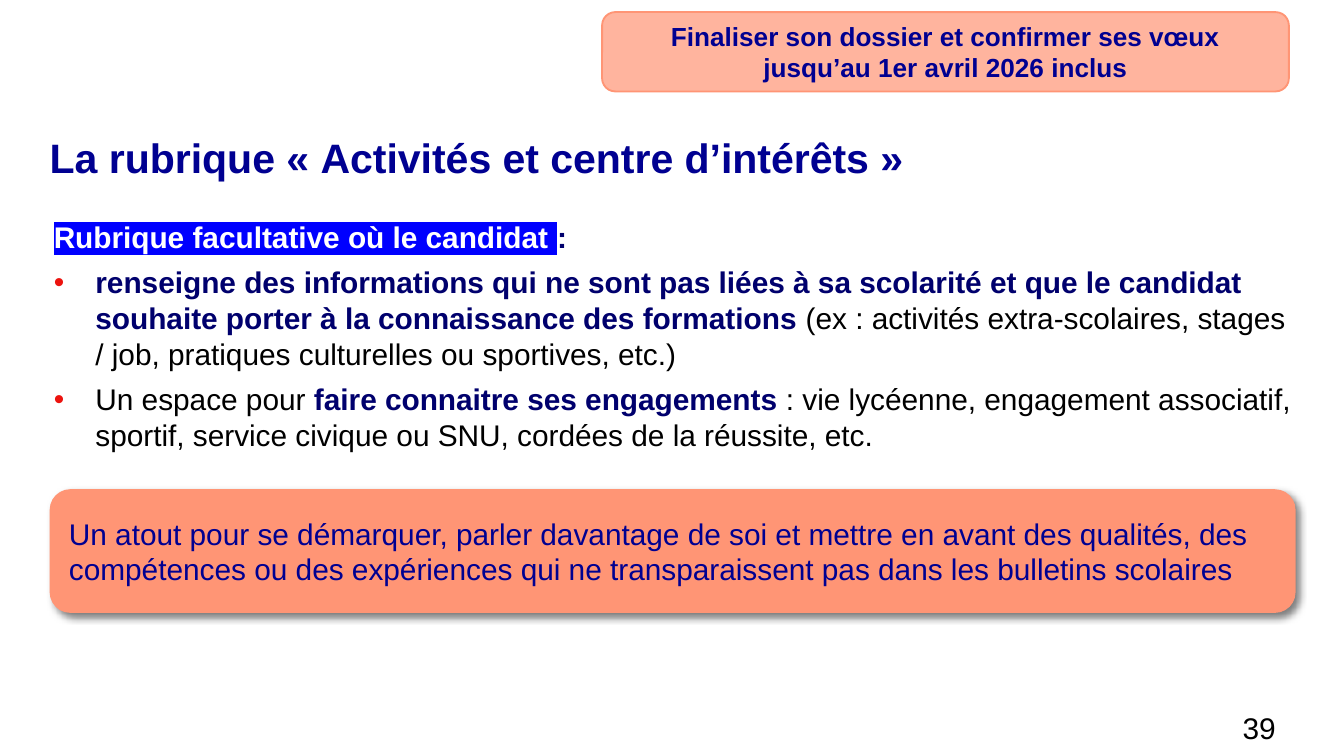
from lxml import etree
from pptx import Presentation
from pptx.dml.color import RGBColor
from pptx.enum.shapes import MSO_SHAPE
from pptx.enum.text import MSO_ANCHOR, PP_ALIGN
from pptx.oxml.ns import qn
from pptx.util import Inches, Pt

ROUND = MSO_SHAPE.ROUNDED_RECTANGLE
MIDDLE = MSO_ANCHOR.MIDDLE
LEFT, CENTER, RIGHT = PP_ALIGN.LEFT, PP_ALIGN.CENTER, PP_ALIGN.RIGHT
WIDTH = Inches(10)
HEIGHT = WIDTH * 9 // 16

COLORS = {
    "navy": "000091",
    "ink": "00006D",
    "blue": "0000FF",
    "coral": "FF9575",
    "red": "EC130E",
    "black": "000000",
    "white": "FFFFFF",
}
FLAT = {
    "margin_left": 0,
    "margin_right": 0,
    "margin_top": 0,
    "margin_bottom": 0,
}


def assign(target, values):
    for name, value in values.items():
        setattr(target, name, value)


def add_tag(parent, tag, **attrs):
    return etree.SubElement(parent, qn(tag), attrs)


def add_color(parent, name, alpha=None):
    color = add_tag(parent, "a:srgbClr", val=COLORS[name])
    if alpha:
        add_tag(color, "a:alpha", val=str(alpha * 1000))


def add_run(para, text, size, color, bold=False, mark=None):
    run = para.add_run()
    run.text = text
    assign(run.font, {"size": Pt(size), "bold": bold})
    run.font.color.rgb = RGBColor.from_string(COLORS[color])
    if mark:
        add_color(add_tag(run.font._element, "a:highlight"), mark)
    run.font.name = "Arial"


def add_bullet(para):
    props = para._p.get_or_add_pPr()
    indent = Inches(0.31)
    props.set("marL", str(indent))
    props.set("indent", str(-indent))
    add_color(add_tag(props, "a:buClr"), "red")
    add_tag(props, "a:buFont", typeface="Arial")
    add_tag(props, "a:buChar", char="•")


def add_text(slide, box, frame=None):
    text = slide.shapes.add_textbox(*map(Inches, box)).text_frame
    assign(text, {"word_wrap": True, **(frame or {})})
    return text


def add_card(slide, box, text, size, align, bold=False):
    card = slide.shapes.add_shape(ROUND, *map(Inches, box))
    card.shadow.inherit = False
    card.fill.solid()
    card.fill.fore_color.rgb = RGBColor.from_string(COLORS["coral"])
    card.line.fill.background()
    assign(card.text_frame, {"word_wrap": True, "vertical_anchor": MIDDLE})
    para = card.text_frame.paragraphs[0]
    para.alignment = align
    add_run(para, text, size, "navy", bold)
    return card


def add_banner(slide, box):
    text = "Finaliser son dossier et confirmer ses vœux jusqu’au 1er avril 2026 inclus"
    card = add_card(slide, box, text, 14, CENTER, True)
    fill = card._element.spPr.find(qn("a:solidFill"))
    add_tag(fill[0], "a:alpha", val="70000")
    card.line.color.rgb = RGBColor.from_string(COLORS["coral"])
    card.line.width = Pt(1)


def add_title(slide, box):
    para = add_text(slide, box, FLAT).paragraphs[0]
    para.line_spacing = 0.9
    add_run(para, "La rubrique «\u00a0Activités et centre d’intérêts\u00a0»", 22, "navy", True)


def add_body(slide, box):
    strong, plain = ("ink", True), ("black", False)
    rows = [
        (False, [
            ("Rubrique facultative où le candidat ", "white", True, "blue"),
            (":", *strong),
        ]),
        (True, [
            ("renseigne des informations qui ne sont pas liées à sa scolarité "
             "et que le candidat souhaite porter à la connaissance des formations ", *strong),
            ("(ex : activités extra-scolaires, stages / job, "
             "pratiques culturelles ou sportives, etc.)", *plain),
        ]),
        (True, [
            ("Un espace pour ", *plain),
            ("faire connaitre ses engagements ", *strong),
            (": vie lycéenne, engagement associatif, sportif, "
             "service civique ou SNU, cordées de la réussite, etc.", *plain),
        ]),
    ]
    frame = add_text(slide, box, FLAT)
    for index, (bullet, runs) in enumerate(rows):
        para = frame.add_paragraph() if index else frame.paragraphs[0]
        if bullet:
            add_bullet(para)
        para.space_after = Pt(5)
        for text, *style in runs:
            add_run(para, text, 16, *style)


def add_tip(slide, box):
    text = ("Un atout pour se démarquer, parler davantage de soi et mettre en avant "
            "des qualités, des compétences ou des expériences qui ne transparaissent "
            "pas dans les bulletins scolaires")
    card = add_card(slide, box, text, 16, LEFT)
    effects = card._element.spPr.find(qn("a:effectLst"))
    shade = add_tag(effects, "a:outerShdw", blurRad=str(Pt(4)), dist=str(Pt(3)),
                    dir=str(45 * 60000), algn="tl", rotWithShape="0")
    add_color(shade, "black", 50)


def add_number(slide, box):
    para = add_text(slide, box).paragraphs[0]
    para.alignment = RIGHT
    add_run(para, "39", 16, "black")


def main():
    deck = Presentation()
    assign(deck, {"slide_width": WIDTH, "slide_height": HEIGHT})
    slide = deck.slides.add_slide(deck.slide_layouts[6])
    add_title(slide, (0.37, 1.03, 9.21, 0.79))
    add_body(slide, (0.4, 1.63, 9.21, 3.03))
    add_number(slide, (8.31, 5.23, 1.28, 0.39))
    add_tip(slide, (0.37, 3.64, 9.27, 0.92))
    add_banner(slide, (4.48, 0.09, 5.11, 0.59))
    deck.save("out.pptx")


if __name__ == "__main__":
    main()
